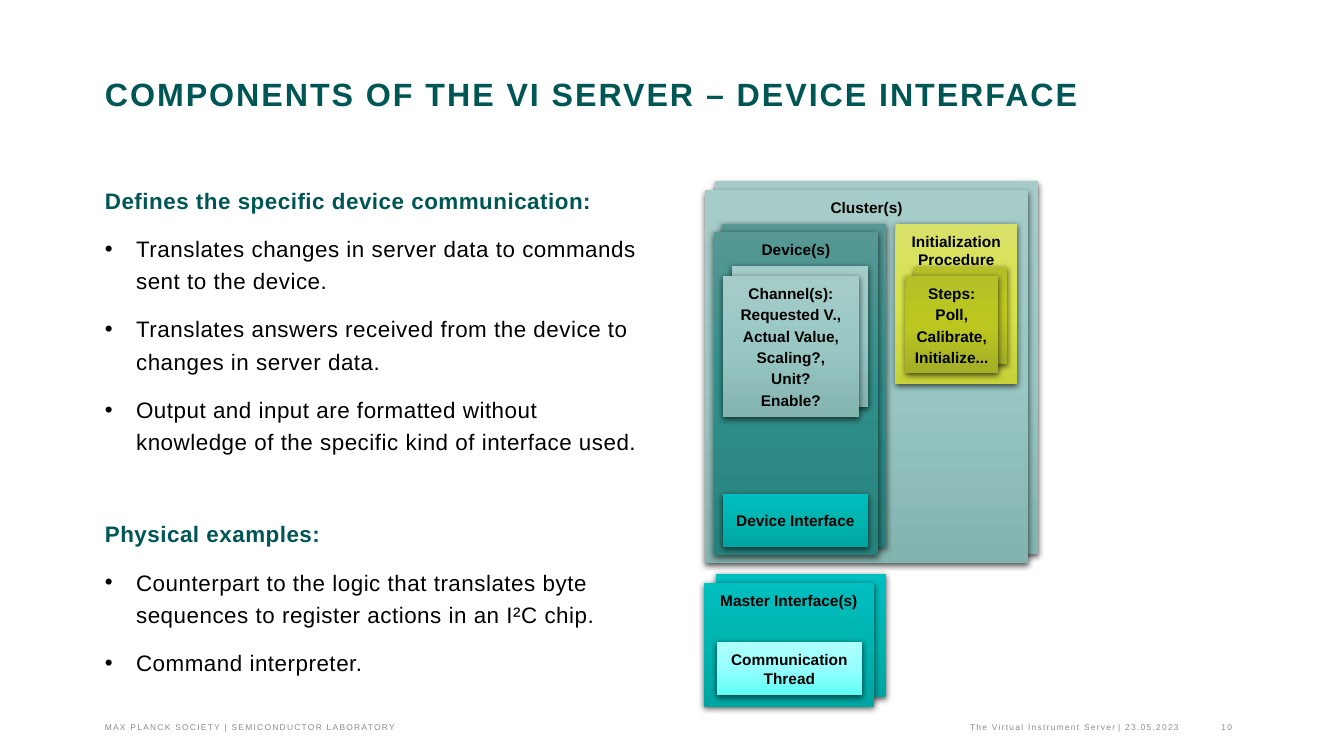
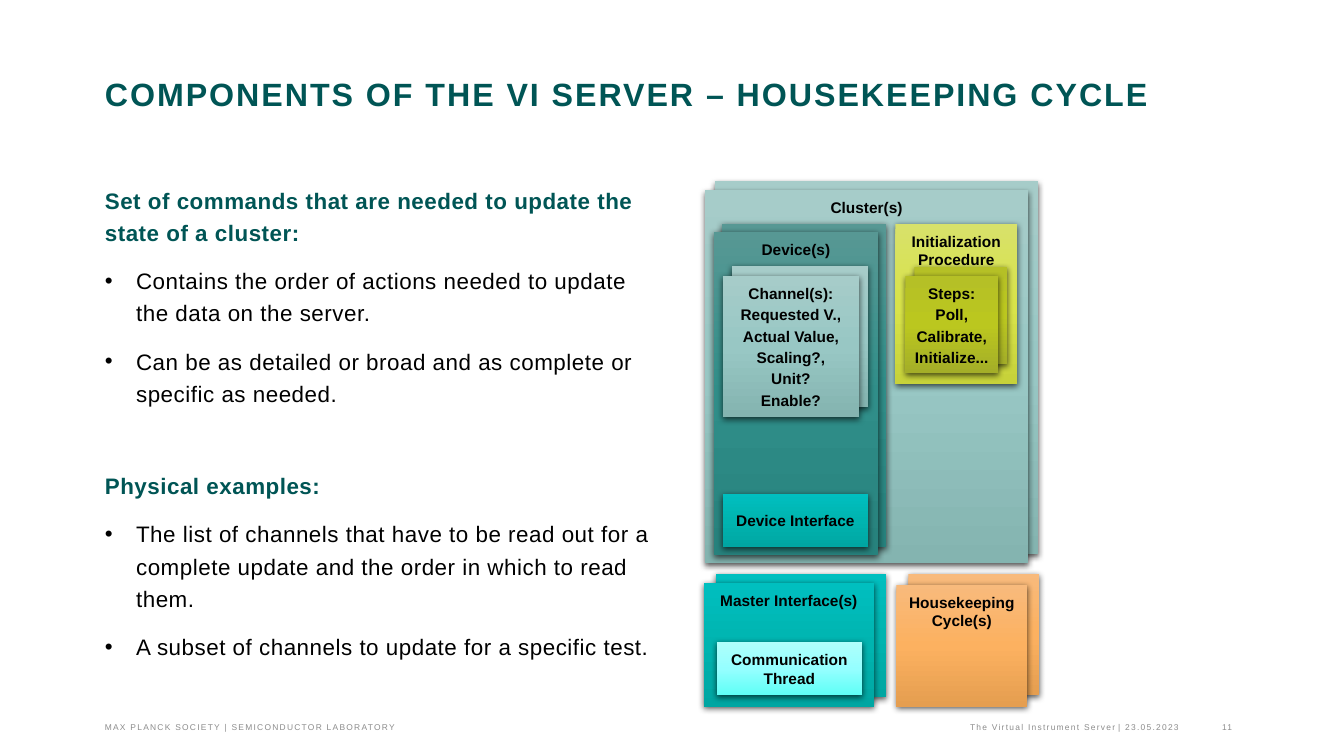
from pptx import Presentation
from pptx.dml.color import RGBColor
from pptx.enum.shapes import MSO_SHAPE as Shape
from pptx.enum.text import MSO_ANCHOR as Anchor, PP_ALIGN as Align
from pptx.oxml import parse_xml
from pptx.oxml.ns import nsdecls
from pptx.util import Pt

PX = 9144
FIRST_PAGE = 10
FONT = "Arial"
GREEN, BLACK, GREY = "005555", "000000", "8C8C8C"
GRADIENTS = {
    "mist": ("A6CCC9", "98C7C4", "84B4B0"),
    "teal": ("579894", "308E89", "27827D"),
    "turquoise": ("00BFBF", "00B4B0", "00A6A2"),
    "aqua": ("AFFFFB", "95FFFF", "5EFFF6"),
    "lime": ("D8E16A", "D8E34A", "C7D23A"),
    "olive": ("B5C026", "BBC71F", "A4AE28"),
    "orange": ("F8BA7C", "FCB160", "E59E50"),
}

TITLE_STYLE = dict(size=23, color=GREEN, bold=True, tracking=140, line=26)
HEADING_STYLE = dict(size=16, color=GREEN, bold=True, tracking=40, line=23, before=43)
BULLET_STYLE = dict(size=16, color=BLACK, tracking=40, line=23, before=11.5, hang=31)
FOOTER_STYLE = dict(size=6, color=GREY, tracking=90)
BLOCK_STYLE = dict(size=11, color=BLACK, bold=True, align=Align.CENTER, before=2)

COMPONENTS = [
    (["Cluster(s)"], (699, 189, 321, 370), "mist", (10, -9), Anchor.TOP),
    (["Device(s)"], (708, 230, 163, 321), "teal", (8, -8), Anchor.TOP),
    (["Channel(s):", "Requested V.,", "Actual Value,", "Scaling?,", "Unit?", "Enable?"],
     (717, 274, 135, 140), "mist", (9, -10), Anchor.TOP),
    (["Device Interface"], (717, 490, 144, 53), "turquoise", None, Anchor.MIDDLE),
    (["Initialization Procedure"], (888, 222, 121, 159), "lime", None, Anchor.TOP),
    (["Steps:", "Poll,", "Calibrate,", "Initialize..."],
     (898, 274, 92, 96), "olive", (9, -9), Anchor.TOP),
    (["Master Interface(s)"], (698, 578, 169, 123), "turquoise", (12, -9), Anchor.TOP),
    (["Communication Thread"], (711, 637, 144, 53), "aqua", None, Anchor.MIDDLE),
]
HOUSEKEEPING = (["Housekeeping Cycle(s)"], (889, 580, 130, 121), "orange", (12, -11), Anchor.TOP)

FOOTER = [
    ("MAX PLANCK SOCIETY | SEMICONDUCTOR LABORATORY", 104, 293, Align.LEFT),
    ("The Virtual Instrument Server", 397, 709, Align.RIGHT),
    ("|", 1109, 5, Align.LEFT),
    ("23.05.2023", 1116, 61, Align.LEFT),
]

SLIDES = [
    dict(
        title="COMPONENTS OF THE VI SERVER – DEVICE INTERFACE",
        body_width=531,
        sections=[
            ("Defines the specific device communication:", [
                "Translates changes in server data to commands sent to the device.",
                "Translates answers received from the device to changes in server data.",
                "Output and input are formatted without knowledge of the specific kind of "
                "interface used.",
            ]),
            ("Physical examples:", [
                "Counterpart to the logic that translates byte sequences to register actions "
                "in an I²C chip.",
                "Command interpreter.",
            ]),
        ],
        components=COMPONENTS,
    ),
    dict(
        title="COMPONENTS OF THE VI SERVER – HOUSEKEEPING CYCLE",
        body_width=549,
        sections=[
            ("Set of commands that are needed to update the state of a cluster:", [
                "Contains the order of actions needed to update the data on the server.",
                "Can be as detailed or broad and as complete or specific as needed.",
            ]),
            ("Physical examples:", [
                "The list of channels that have to be read out for a complete update and the "
                "order in which to read them.",
                "A subset of channels to update for a specific test.",
            ]),
        ],
        components=COMPONENTS + [HOUSEKEEPING],
    ),
]


def rgb(value):
    return RGBColor.from_string(value)


def emu(lengths):
    return [length * PX for length in lengths]


def write(frame, text, size, color, bold=False, tracking=0, align=Align.LEFT,
          line=None, before=0, hang=0):
    first = not frame.text
    paragraph = frame.paragraphs[0] if first else frame.add_paragraph()
    if hang:
        properties = paragraph._p.get_or_add_pPr()
        properties.set("marL", str(hang * PX))
        properties.set("indent", str(-hang * PX))
        properties.append(parse_xml(f'<a:buFont {nsdecls("a")} typeface="{FONT}"/>'))
        properties.append(parse_xml(f'<a:buChar {nsdecls("a")} char="•"/>'))
    paragraph.alignment = align
    paragraph.space_before = Pt(0 if first else before)
    if line:
        paragraph.line_spacing = Pt(line)
    run = paragraph.add_run()
    run.text = text
    run.font.name, run.font.size, run.font.bold = FONT, Pt(size), bold
    run.font.color.rgb = rgb(color)
    if tracking:
        run.font._element.set("spc", str(tracking))


def set_up(frame, inset, anchor):
    frame.word_wrap = True
    frame.vertical_anchor = anchor
    frame.margin_left = frame.margin_right = inset * PX
    frame.margin_top = frame.margin_bottom = inset * PX
    return frame


def text_area(slide, box, anchor=Anchor.TOP):
    return set_up(slide.shapes.add_textbox(*emu(box)).text_frame, 0, anchor)


def add_block(slide, box, gradient):
    block = slide.shapes.add_shape(Shape.RECTANGLE, *emu(box))
    block.line.fill.background()
    stops = "".join(
        f'<a:gs pos="{i * 50000}"><a:srgbClr val="{color}"/></a:gs>'
        for i, color in enumerate(GRADIENTS[gradient]))
    properties = block._element.spPr
    properties.insert(2, parse_xml(
        f'<a:gradFill {nsdecls("a")} rotWithShape="1"><a:gsLst>{stops}</a:gsLst>'
        '<a:lin ang="5400000" scaled="0"/></a:gradFill>'))
    properties.append(parse_xml(
        f'<a:effectLst {nsdecls("a")}><a:outerShdw blurRad="{Pt(4.5)}" dist="{Pt(1.5)}" '
        'dir="5400000" rotWithShape="0"><a:srgbClr val="000000"><a:alpha val="63000"/>'
        '</a:srgbClr></a:outerShdw></a:effectLst>'))
    return block


def add_component(slide, lines, box, gradient, shift, anchor):
    if shift:
        left, top, width, height = box
        add_block(slide, (left + shift[0], top + shift[1], width, height), gradient)
    frame = set_up(add_block(slide, box, gradient).text_frame, 8, anchor)
    for line in lines:
        write(frame, line, **BLOCK_STYLE)


def add_footer(slide, page):
    for text, left, width, align in FOOTER + [(str(page), 1186, 36, Align.RIGHT)]:
        area = text_area(slide, (left, 706, width, 20), Anchor.BOTTOM)
        write(area, text, align=align, **FOOTER_STYLE)


def build_slide(deck, page, content):
    slide = deck.slides.add_slide(deck.slide_layouts[6])
    write(text_area(slide, (104, 76, 1126, 105)), content["title"], **TITLE_STYLE)
    body = text_area(slide, (104, 180, content["body_width"], 520))
    for heading, bullets in content["sections"]:
        write(body, heading, **HEADING_STYLE)
        for bullet in bullets:
            write(body, bullet, **BULLET_STYLE)
    for component in content["components"]:
        add_component(slide, *component)
    add_footer(slide, page)


def main():
    deck = Presentation()
    deck.slide_width, deck.slide_height = emu((1333, 750))
    for page, content in enumerate(SLIDES, FIRST_PAGE):
        build_slide(deck, page, content)
    deck.save("out.pptx")


if __name__ == "__main__":
    main()
